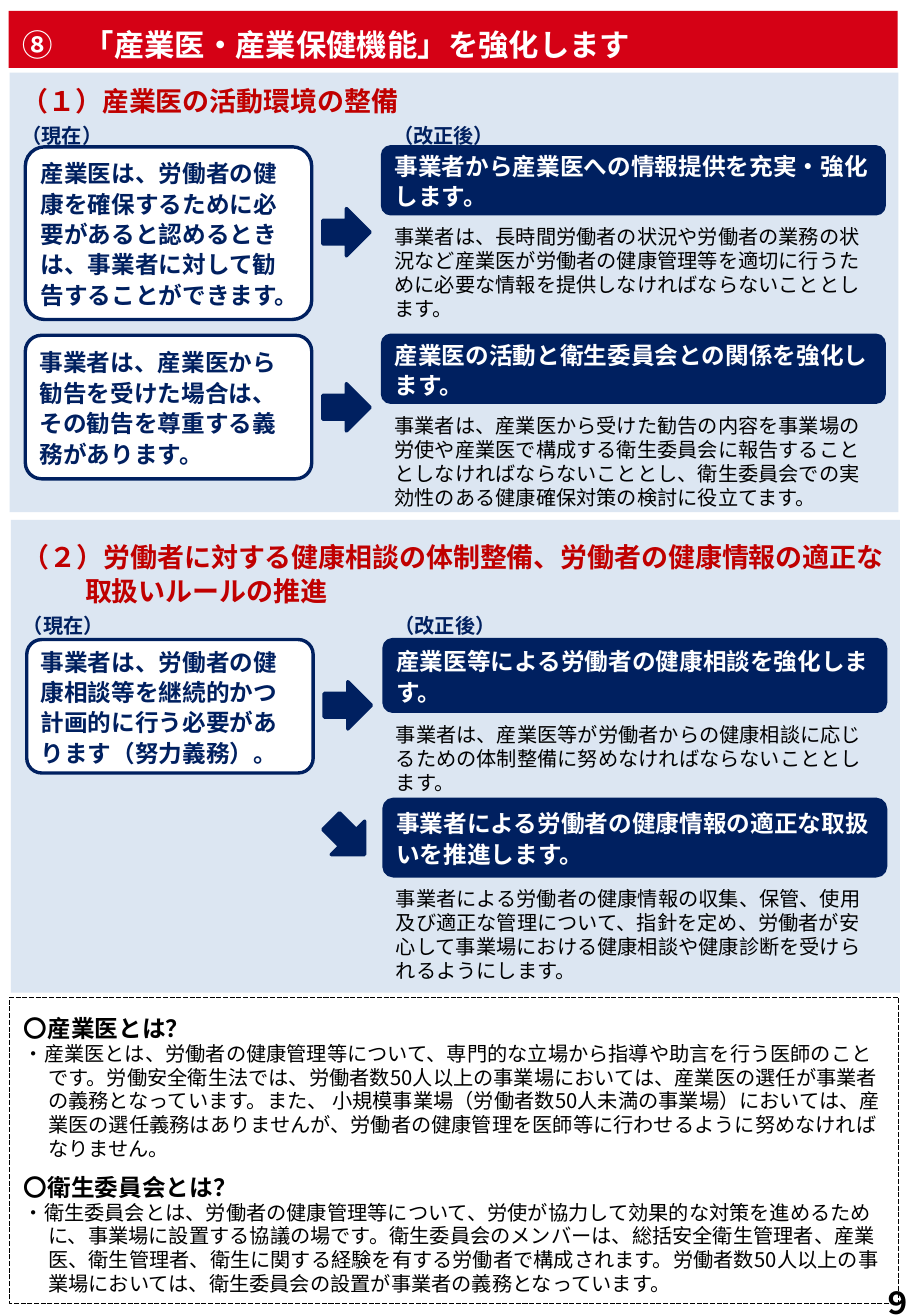
from collections import namedtuple

from pptx import Presentation
from pptx import util as u
from pptx.enum import dml, shapes, text
from pptx.oxml import ns
from pptx.dml.color import RGBColor

FONT = "Noto Sans CJK JP"
COLORS = {"red": "D50115", "heading": "C00000", "navy": "002060",
          "panel": "DCE6F2", "white": "FFFFFF", "black": "000000"}
MIDDLE = text.MSO_ANCHOR.MIDDLE

Box = namedtuple("Box", "left top width height")
# Tops and heights are in cm, measured from the top of the section.
Row = namedtuple("Row", "current current_height after after_height detail "
                 "detail_height top arrow_top arrow_turn")


def rgb(name):
    return RGBColor.from_string(COLORS[name])


def within(box, left, top, width, height):
    return Box(box.left + left, box.top + top, width, height)


def lengths(box):
    return [u.Cm(value) for value in box]


def add_paragraph(frame, content, size=12, color="black", bold=False, spacing=None,
                  before=0, margin=0, indent=0, align=text.PP_ALIGN.LEFT):
    """Fill the empty first paragraph of the frame, or add another one."""
    paragraph = frame.paragraphs[0]
    if paragraph.runs:
        paragraph = frame.add_paragraph()
    paragraph.alignment = align
    paragraph.space_before = u.Pt(before)
    if spacing:
        paragraph.line_spacing = u.Pt(spacing)
    properties = paragraph._p.get_or_add_pPr()
    properties.set("marL", str(u.Cm(margin)))
    properties.set("indent", str(u.Cm(indent)))
    run = paragraph.add_run()
    run.text = content
    run.font.name = FONT
    run.font.size = u.Pt(size)
    run.font.bold = bold
    run.font.color.rgb = rgb(color)
    east_asian = run._r.get_or_add_rPr().makeelement(ns.qn("a:ea"), {"typeface": FONT})
    run.font._element.find(ns.qn("a:latin")).addnext(east_asian)


def prepare_frame(shape, insets, anchor=text.MSO_ANCHOR.TOP):
    frame = shape.text_frame
    frame.word_wrap = True
    frame.vertical_anchor = anchor
    (frame.margin_left, frame.margin_top,
     frame.margin_right, frame.margin_bottom) = lengths(insets)
    return frame


def add_text(slide, box, content, insets=(0.25, 0.13, 0.25, 0.13),
             anchor=text.MSO_ANCHOR.TOP, **style):
    frame = prepare_frame(slide.shapes.add_textbox(*lengths(box)), insets, anchor)
    add_paragraph(frame, content, **style)


def add_block(slide, kind, box, fill=None, line=None, weight=2):
    shape = slide.shapes.add_shape(kind, *lengths(box))
    shape.shadow.inherit = False
    if fill:
        shape.fill.solid()
        shape.fill.fore_color.rgb = rgb(fill)
    else:
        shape.fill.background()
    if line:
        shape.line.color.rgb = rgb(line)
        shape.line.width = u.Pt(weight)
    else:
        shape.line.fill.background()
    return shape


def add_card(slide, box, content, fill, color, rounding):
    card = add_block(slide, shapes.MSO_SHAPE.ROUNDED_RECTANGLE, box, fill, "navy")
    card.adjustments[0] = rounding
    frame = prepare_frame(card, (0.2, 0.2, 0.2, 0.2), MIDDLE)
    add_paragraph(frame, content, size=14, color=color, bold=True, spacing=18)


def add_title(slide, box):
    bar = add_block(slide, shapes.MSO_SHAPE.RECTANGLE, box, "red")
    frame = prepare_frame(bar, (0.3, 0.2, 0.25, 0), MIDDLE)
    add_paragraph(frame, "⑧　「産業医・産業保健機能」を強化します",
                  size=18, color="white", bold=True)


def add_row(slide, box, row):
    """Place the current rule, the arrow, the new rule and its explanation."""
    if row.current:
        add_card(slide, within(box, 0.33, row.top, 5.99, row.current_height),
                 row.current, "white", "navy", 0.112)
    arrow = add_block(slide, shapes.MSO_SHAPE.RIGHT_ARROW,
                      within(box, 6.55, row.arrow_top, 0.99, 0.99), "navy", "navy")
    arrow.rotation = row.arrow_turn
    add_card(slide, within(box, 7.8, row.top, 10.49, row.after_height),
             row.after, "navy", "white", 0.124)
    detail_top = row.top + row.after_height + 0.05
    add_text(slide, within(box, 7.8, detail_top, 10.49, row.detail_height),
             row.detail, insets=(0.25, 0.18, 0.25, 0.13), spacing=14.2)


def add_section(slide, box, heading, heading_top, heading_height, hanging, label_top, rows):
    add_block(slide, shapes.MSO_SHAPE.RECTANGLE, box, "panel")
    margin, indent = hanging
    add_text(slide, within(box, 0, heading_top, box.width, heading_height), heading,
             size=16, color="heading", bold=True, spacing=20, margin=margin, indent=indent)
    for label, left, width in (("（現在）", 0, 2.31), ("（改正後）", 7.77, 2.8)):
        add_text(slide, within(box, left, label_top, width, 0.71), label,
                 insets=(0.25, 0.18, 0.25, 0.13), color="navy", bold=True, spacing=14.2)
    for row in rows:
        add_row(slide, box, row)


def add_definitions(slide, box, definitions):
    panel = add_block(slide, shapes.MSO_SHAPE.RECTANGLE, box, line="black", weight=1)
    panel.line.dash_style = dml.MSO_LINE.SQUARE_DOT
    frame = prepare_frame(panel, (0.3, 0.3, 0.3, 0.3))
    for number, (term, meaning) in enumerate(definitions):
        add_paragraph(frame, term, size=14, bold=True, spacing=18,
                      before=6 * number, margin=0.51, indent=-1.27)
        add_paragraph(frame, meaning, spacing=14, margin=0.51, indent=-0.51)


ENVIRONMENT_ROWS = [
    Row("産業医は、労働者の健康を確保するために必要があると認めるときは、事業者に対して勧告することができます。", 3.61,
        "事業者から産業医への情報提供を充実・強化します。", 1.4,
        "事業者は、長時間労働者の状況や労働者の業務の状況など産業医が労働者の健康管理等を適切に行うために"
        "必要な情報を提供しなければならないこととします。", 2.21, 1.55, 2.84, 0),
    Row("事業者は、産業医から勧告を受けた場合は、その勧告を尊重する義務があります。", 3,
        "産業医の活動と衛生委員会との関係を強化します。", 1.4,
        "事業者は、産業医から受けた勧告の内容を事業場の労使や産業医で構成する衛生委員会に報告することと"
        "しなければならないこととし、衛生委員会での実効性のある健康確保対策の検討に役立てます。",
        2.21, 5.49, 6.5, 0),
]
CONSULTATION_ROWS = [
    Row("事業者は、労働者の健康相談等を継続的かつ計画的に行う必要があります（努力義務）。", 2.79,
        "産業医等による労働者の健康相談を強化します。", 1.5,
        "事業者は、産業医等が労働者からの健康相談に応じるための体制整備に努めなければならないこととします。",
        1.8, 2.5, 3.38, 0),
    Row(None, 0, "事業者による労働者の健康情報の適正な取扱いを推進します。", 1.6,
        "事業者による労働者の健康情報の収集、保管、使用及び適正な管理について、指針を定め、労働者が安心して"
        "事業場における健康相談や健康診断を受けられるようにします。", 2.21, 5.84, 6.15, 45),
]
DEFINITIONS = [
    ("〇産業医とは？",
     "・産業医とは、労働者の健康管理等について、専門的な立場から指導や助言を行う医師のことです。"
     "労働安全衛生法では、労働者数50人以上の事業場においては、産業医の選任が事業者の義務となっています。"
     "また、 小規模事業場（労働者数50人未満の事業場）においては、産業医の選任義務はありませんが、"
     "労働者の健康管理を医師等に行わせるように努めなければなりません。"),
    ("〇衛生委員会とは？",
     "・衛生委員会とは、労働者の健康管理等について、労使が協力して効果的な対策を進めるために、"
     "事業場に設置する協議の場です。衛生委員会のメンバーは、総括安全衛生管理者、産業医、衛生管理者、"
     "衛生に関する経験を有する労働者で構成されます。労働者数50人以上の事業場においては、"
     "衛生委員会の設置が事業者の義務となっています。"),
]


def main():
    presentation = Presentation()
    presentation.slide_width, presentation.slide_height = u.Cm(19.05), u.Cm(27.51)
    slide = presentation.slides.add_slide(presentation.slide_layouts[6])
    add_title(slide, Box(0.18, 0.23, 18.59, 1.19))
    add_section(slide, Box(0.2, 1.52, 18.59, 9.19), "（１）産業医の活動環境の整備",
                0.08, 0.94, (0.51, -1.27), 0.88, ENVIRONMENT_ROWS)
    add_section(slide, Box(0.23, 10.87, 18.59, 9.88),
                "（２）労働者に対する健康相談の体制整備、労働者の健康情報の適正な取扱いルールの推進",
                0.28, 1.5, (1.3, -2.06), 1.78, CONSULTATION_ROWS)
    add_definitions(slide, Box(0.2, 20.85, 18.59, 6.4), DEFINITIONS)
    add_text(slide, Box(14.88, 26.49, 4.45, 1.47), "９", anchor=MIDDLE, size=18,
             bold=True, align=text.PP_ALIGN.RIGHT)
    presentation.save("out.pptx")


if __name__ == "__main__":
    main()
